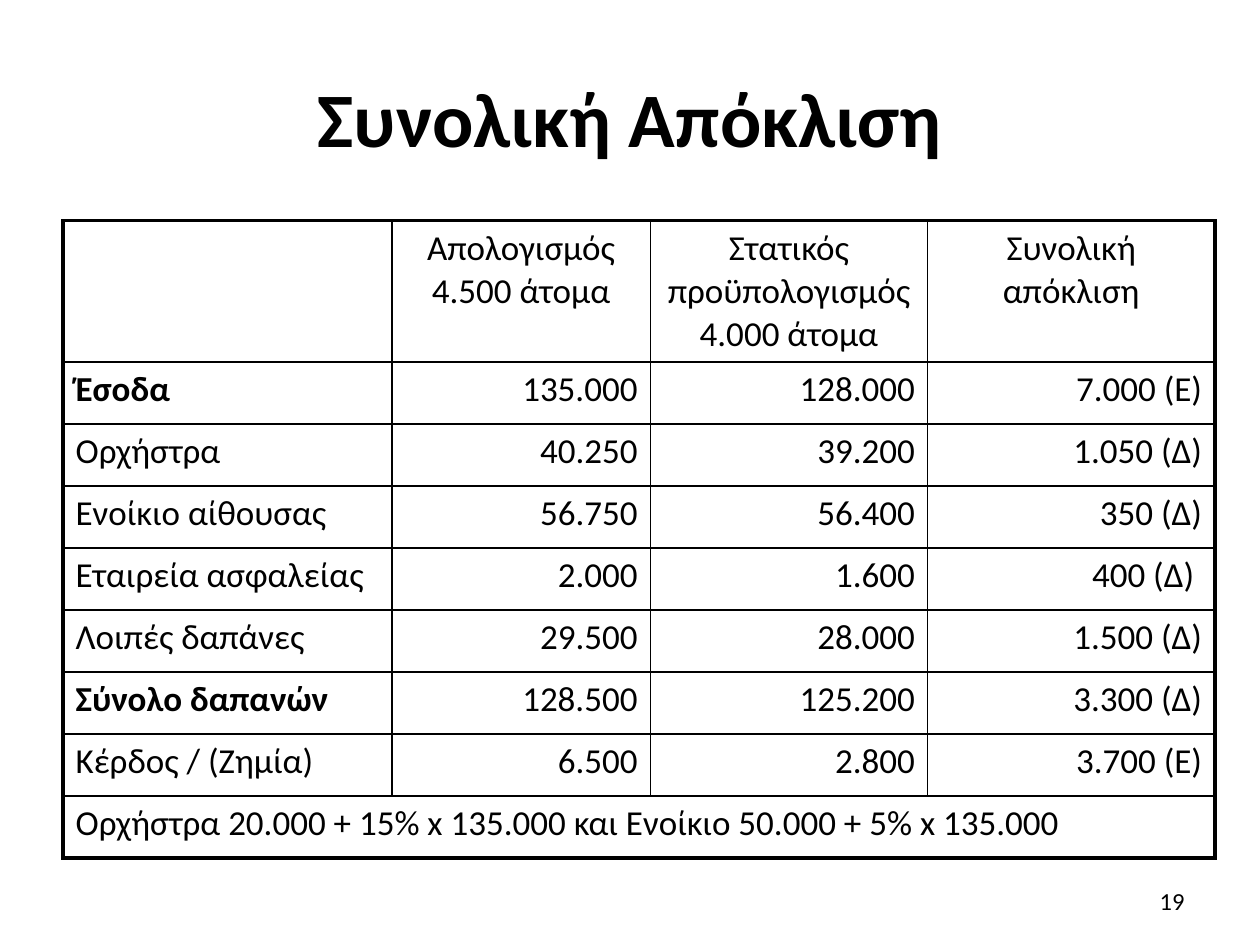
from dataclasses import dataclass

from lxml.etree import SubElement
from pptx import Presentation
from pptx.dml.color import RGBColor
from pptx.enum.text import MSO_ANCHOR, PP_ALIGN
from pptx.oxml.ns import qn
from pptx.util import Cm, Pt


@dataclass(frozen=True)
class Theme:
    font: str = "Calibri"
    ink: str = "000000"
    title: float = 44
    body: float = 20
    number: float = 14
    outer_line: float = 2.25
    inner_line: float = 1


THEME = Theme()


def format_paragraph(p, size, align, bold=False):
    p.alignment = align
    p.font.name = THEME.font
    p.font.size = Pt(size)
    p.font.bold = bold
    p.font.color.rgb = RGBColor.from_string(THEME.ink)


def add_borders(cell, outer_sides):
    """Draw all four sides, with a thicker line on those in outer_sides."""
    tcPr = cell._tc.get_or_add_tcPr()
    for side in "LRTB":
        width = THEME.outer_line if side in outer_sides else THEME.inner_line
        ln = SubElement(tcPr, qn(f"a:ln{side}"), w=str(Pt(width)))
        fill = SubElement(ln, qn("a:solidFill"))
        SubElement(fill, qn("a:srgbClr"), val=THEME.ink)


prs = Presentation()
prs.slide_width, prs.slide_height = Cm(25.4), Cm(19.05)
s = prs.slides.add_slide(prs.slide_layouts[5])

# Title
title = s.shapes.title
title.left, title.top, title.width, title.height = Cm(1.27), Cm(0.76), Cm(22.86), Cm(3.18)
title.text_frame.text = "Συνολική Απόκλιση"
title.text_frame.vertical_anchor = MSO_ANCHOR.MIDDLE
format_paragraph(title.text_frame.paragraphs[0], THEME.title, PP_ALIGN.CENTER, bold=True)

# Variance table
rows = [
    ["", "Απολογισμός 4.500 άτομα", "Στατικός προϋπολογισμός 4.000 άτομα", "Συνολική απόκλιση"],
    ["Έσοδα", "135.000", "128.000", "7.000 (Ε)"],
    ["Ορχήστρα", "40.250", "39.200", "1.050 (Δ)"],
    ["Ενοίκιο αίθουσας", "56.750", "56.400", "350 (Δ)"],
    ["Εταιρεία ασφαλείας", "2.000", "1.600", "400 (Δ) "],
    ["Λοιπές δαπάνες", "29.500", "28.000", "1.500 (Δ)"],
    ["Σύνολο δαπανών", "128.500", "125.200", "3.300 (Δ)"],
    ["Κέρδος / (Ζημία)", "6.500", "2.800", "3.700 (Ε)"],
    ["Ορχήστρα 20.000 + 15% x 135.000 και Ενοίκιο 50.000 + 5% x 135.000", "", "", ""],
]
bold_labels = {"Έσοδα", "Σύνολο δαπανών"}
col_widths = [6.63, 5.21, 5.59, 5.79]
header_height, row_height = 2.84, 1.25
last_row, last_col = len(rows) - 1, len(col_widths) - 1

table = s.shapes.add_table(
    len(rows), len(col_widths), Cm(1.27), Cm(4.45),
    Cm(sum(col_widths)), Cm(header_height + last_row * row_height),
).table
table.first_row = table.horz_banding = False
for column, width in zip(table.columns, col_widths):
    column.width = Cm(width)
for i, row in enumerate(table.rows):
    row.height = Cm(row_height if i else header_height)

for i, texts in enumerate(rows):
    for j, text in enumerate(texts):
        cell = table.cell(i, j)
        cell.text = text
        if i == 0:
            align = PP_ALIGN.CENTER
        else:
            align = PP_ALIGN.RIGHT if j else PP_ALIGN.LEFT
        format_paragraph(cell.text_frame.paragraphs[0], THEME.body, align, text in bold_labels)
        outer = {"T": i == 0, "B": i == last_row, "L": j == 0,
                 "R": j == last_col or i == last_row}
        add_borders(cell, [side for side, is_outer in outer.items() if is_outer])
        cell.fill.background()
table.cell(last_row, 0).merge(table.cell(last_row, last_col))

# Slide number
tf = s.shapes.add_textbox(Cm(18.21), Cm(17.65), Cm(5.92), Cm(1.02)).text_frame
tf.word_wrap = True
tf.vertical_anchor = MSO_ANCHOR.MIDDLE
tf.text = "19"
format_paragraph(tf.paragraphs[0], THEME.number, PP_ALIGN.RIGHT)

prs.save("out.pptx")
